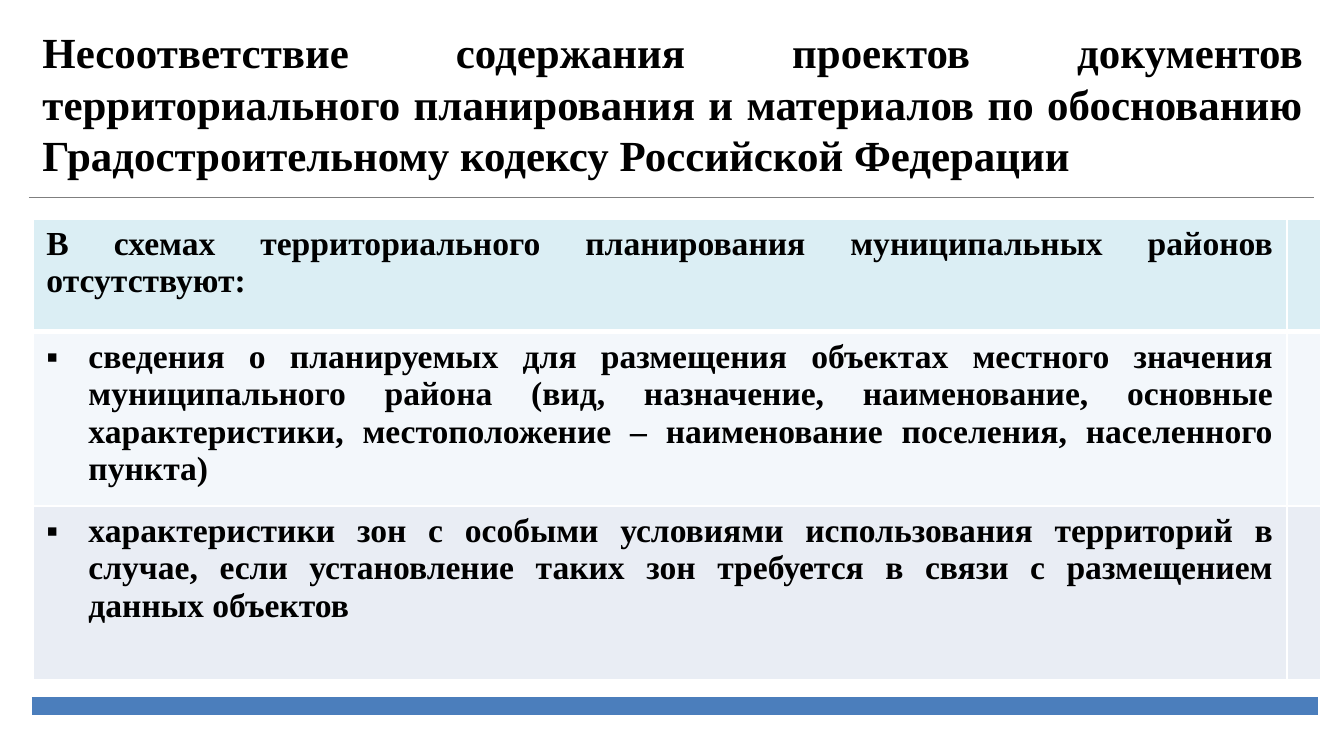
"""Build a slide on gaps in municipal territorial planning schemes."""
from lxml import etree
from pptx import Presentation, util as u
from pptx.dml.color import RGBColor
from pptx.enum import shapes, text
from pptx.oxml.ns import qn

TITLE = ("Несоответствие содержания проектов документов территориального планирования "
         "и материалов по обоснованию Градостроительному кодексу Российской Федерации")
ROWS = [
    {"text": "В схемах территориального планирования муниципальных районов отсутствуют:",
     "fill": "header", "height": 113, "bullet": False, "bottom": 3},
    {"text": "сведения о планируемых для размещения объектах местного значения муниципального "
             "района (вид, назначение, наименование, основные характеристики, местоположение "
             "– наименование поселения, населенного пункта)",
     "fill": "light", "height": 174, "bullet": True, "bottom": 1},
    {"text": "характеристики зон с особыми условиями использования территорий в случае, если "
             "установление таких зон требуется в связи с размещением данных объектов",
     "fill": "dark", "height": 174, "bullet": True, "bottom": 1},
]
COLUMNS = [1254, 34]
LINES = [
    {"x": 29, "y": 197, "length": 1285, "color": "rule", "width": 0.25},
    {"x": 32, "y": 706, "length": 1286, "color": "bar", "width": 10},
]
COLORS = {"text": "000000", "rule": "7F7F7F", "bar": "4B7EBC", "border": "FFFFFF",
          "header": "DBEEF4", "light": "F3F7FB", "dark": "E9EDF4"}
FONT = "Times New Roman"
INDENT = 42


def px(n):
    return u.Emu(round(n * 914400 / 134.4))


def rgb(name):
    return RGBColor.from_string(COLORS[name])


def write(tf, words, size):
    p = tf.paragraphs[0]
    p.alignment = text.PP_ALIGN.JUSTIFY
    r = p.add_run()
    r.text = words
    for key, value in {"name": FONT, "size": u.Pt(size), "bold": True}.items():
        setattr(r.font, key, value)
    r.font.color.rgb = rgb("text")
    return p


def add_bullet(p):
    pr = p._p.get_or_add_pPr()
    pr.set("marL", str(px(INDENT)))
    pr.set("indent", str(-px(INDENT)))
    etree.SubElement(pr, qn("a:buFont"), typeface=FONT)
    etree.SubElement(pr, qn("a:buChar"), char="▪")


def add_borders(cell, widths):
    pr = cell._tc.get_or_add_tcPr()
    for i, (side, width) in enumerate(widths.items()):
        ln = etree.Element(qn(f"a:ln{side}"), w=str(u.Pt(width)))
        fill = etree.SubElement(ln, qn("a:solidFill"))
        etree.SubElement(fill, qn("a:srgbClr"), val=COLORS["border"])
        pr.insert(i, ln)


def add_title(s):
    sp = s.shapes.title
    for key, value in zip(("left", "top", "width", "height"), (29, 19, 1289, 169)):
        setattr(sp, key, px(value))
    tf = sp.text_frame
    for key, value in {"word_wrap": True, "vertical_anchor": text.MSO_ANCHOR.TOP,
                       "auto_size": text.MSO_AUTO_SIZE.NONE}.items():
        setattr(tf, key, value)
    write(tf, TITLE, 23)


def add_line(s, line):
    y = px(line["y"])
    sp = s.shapes.add_connector(shapes.MSO_CONNECTOR.STRAIGHT, px(line["x"]), y,
                                px(line["x"] + line["length"]), y)
    sp.line.color.rgb = rgb(line["color"])
    sp.line.width = u.Pt(line["width"])
    etree.SubElement(sp._element.spPr, qn("a:effectLst"))


def add_grid(s):
    heights = [row["height"] for row in ROWS]
    table = s.shapes.add_table(len(ROWS), len(COLUMNS), px(33), px(219),
                               px(sum(COLUMNS)), px(sum(heights))).table
    for column, width in zip(table.columns, COLUMNS):
        column.width = px(width)
    top = 1
    for i, row in enumerate(ROWS):
        table.rows[i].height = px(row["height"])
        for cell in table.rows[i].cells:
            cell.fill.solid()
            cell.fill.fore_color.rgb = rgb(row["fill"])
            add_borders(cell, {"L": 1, "R": 1, "T": top, "B": row["bottom"]})
        p = write(table.cell(i, 0).text_frame, row["text"], 18)
        if row["bullet"]:
            add_bullet(p)
        top = row["bottom"]


def main():
    prs = Presentation()
    prs.slide_width, prs.slide_height = px(1344), px(756)
    s = prs.slides.add_slide(prs.slide_layouts[5])
    add_title(s)
    for line in LINES:
        add_line(s, line)
    add_grid(s)
    prs.save("out.pptx")


if __name__ == "__main__":
    main()
